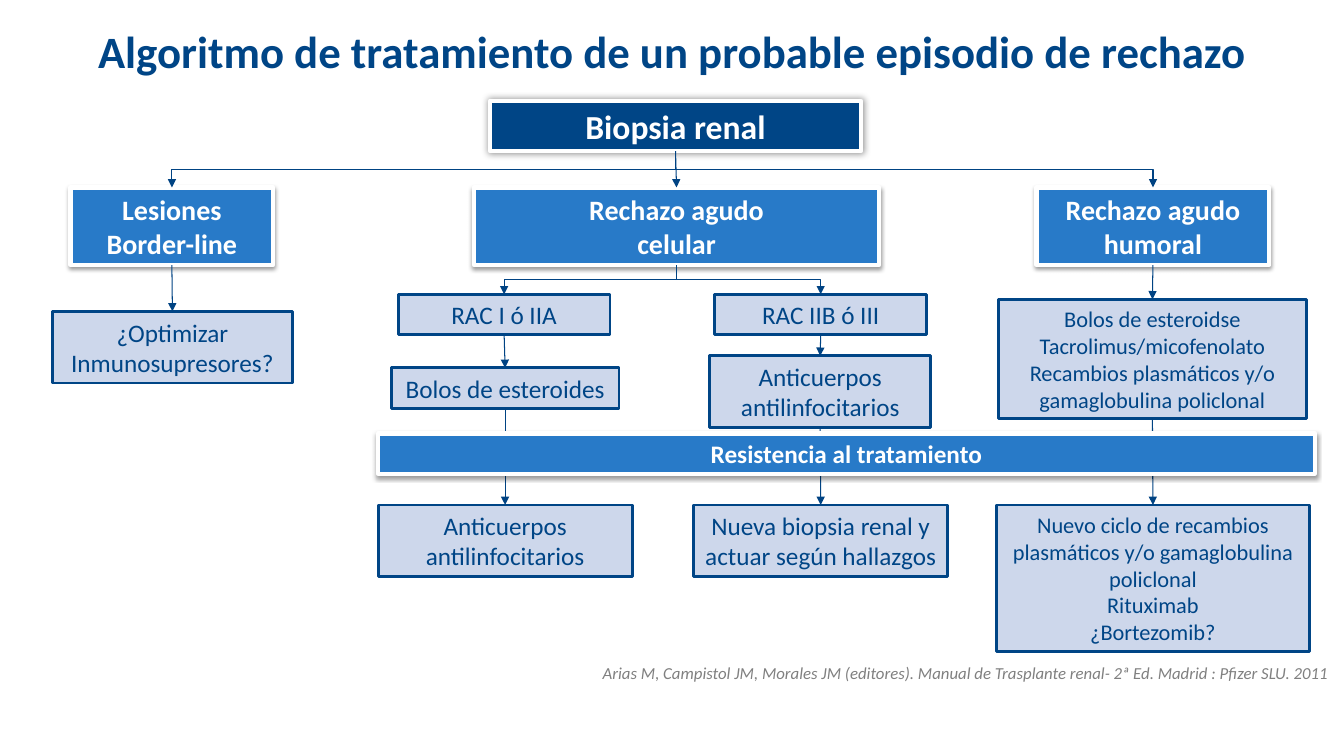
from lxml import etree
from pptx import Presentation
from pptx.dml.color import RGBColor
from pptx.enum.shapes import MSO_CONNECTOR as Link, MSO_SHAPE as Shape
from pptx.enum.text import MSO_ANCHOR as Anchor, MSO_AUTO_SIZE as Fit, PP_ALIGN as Align
from pptx.oxml.ns import qn
from pptx.util import Inches, Pt

NAVY, BLUE, PALE, WHITE, GREY = "004586", "287AC8", "CDD7EB", "FFFFFF", "808080"
WIRE = "004383"
TOP, BOTTOM = 0, 2


def rgb(code):
    return RGBColor.from_string(code)


class Chart:
    """Draws the boxes and arrows of the flow on one slide."""
    font = "Calibri"

    def __init__(self, slide):
        self.slide = slide
        self.shapes = slide.shapes

    def label(self, shape, text, size, color, bold=False, italic=False, align=Align.CENTER):
        frame = shape.text_frame
        frame.word_wrap = True
        frame.vertical_anchor = Anchor.MIDDLE
        frame.text = text
        para = frame.paragraphs[0]
        para.alignment = align
        font = para.font
        font.name, font.size = self.font, Pt(size)
        font.bold, font.italic = bold, italic
        font.color.rgb = rgb(color)

    def title(self, text, *area):
        shape = self.shapes.title
        shape.left, shape.top, shape.width, shape.height = map(Inches, area)
        self.label(shape, text, 32, NAVY, bold=True)

    def note(self, text, *area):
        shape = self.shapes.add_textbox(*map(Inches, area))
        self.label(shape, text, 12, GREY, italic=True, align=Align.RIGHT)

    def box(self, text, area, size, fill, edge, width, color, bold=False):
        shape = self.shapes.add_shape(Shape.RECTANGLE, *map(Inches, area))
        shape.shadow.inherit = False
        shape.fill.solid()
        shape.fill.fore_color.rgb = rgb(fill)
        shape.line.color.rgb = rgb(edge)
        shape.line.width = Pt(width)
        self.label(shape, text, size, color, bold)
        shape.text_frame.auto_size = Fit.SHAPE_TO_FIT_TEXT
        return shape

    def head(self, text, area, size=20, fill=BLUE, blur=3.1, dist=1.6, alpha=38):
        """Add a filled box with a white edge and a soft shadow."""
        shape = self.box(text, area, size, fill, WHITE, 3, WHITE, True)
        effects = shape.element.spPr.find(qn("a:effectLst"))
        shade = etree.SubElement(effects, qn("a:outerShdw"), blurRad=str(Pt(blur)),
                                 dist=str(Pt(dist)), dir="5400000", rotWithShape="0")
        tone = etree.SubElement(shade, qn("a:srgbClr"), val="000000")
        etree.SubElement(tone, qn("a:alpha"), val=str(alpha * 1000))
        return shape

    def step(self, text, area, size=18):
        return self.box(text, area, size, PALE, NAVY, 2, NAVY)

    def arrow(self, start, end, kind=Link.STRAIGHT):
        """Join the bottom of one box to the top of another."""
        wire = self.shapes.add_connector(kind, 0, 0, 0, 0)
        wire.begin_connect(start, BOTTOM)
        wire.end_connect(end, TOP)
        wire.line.color.rgb = rgb(WIRE)
        wire.line.width = Pt(0.75)
        props = wire.element.spPr
        etree.SubElement(props.find(qn("a:ln")), qn("a:tailEnd"), type="triangle")
        etree.SubElement(props, qn("a:effectLst"))
        return wire

    def bend(self, start, end):
        """Add an arrow that runs down, across and down again."""
        wire = self.arrow(start, end, Link.ELBOW)
        right = wire.end_x > wire.begin_x
        wide, high = wire.width, wire.height
        mid_x, mid_y = wire.left + wide // 2, wire.top + high // 2
        wire.left, wire.top = mid_x - high // 2, mid_y - wide // 2
        wire.width, wire.height = high, wide
        frame = wire.element.spPr.find(qn("a:xfrm"))
        frame.set("rot", "16200000" if right else "5400000")
        frame.set("flipH", "1" if right else "0")


def main():
    deck = Presentation()
    deck.slide_width, deck.slide_height = Inches(13.33), Inches(7.5)
    flow = Chart(deck.slides.add_slide(deck.slide_layouts[5]))
    flow.title("Algoritmo de tratamiento de un probable episodio de rechazo",
               0.67, 0.17, 12, 0.66)

    root = flow.head("Biopsia renal", (4.86, 1, 3.68, 0.5), 24, NAVY, 5, 0, 40)
    border, cell, humor = [
        flow.head(text, (left, 1.86, width, 0.77)) for text, left, width in (
            ("Lesiones\vBorder-line", 0.7, 2.01),
            ("Rechazo agudo\vcelular", 4.7, 4.02),
            ("Rechazo agudo\vhumoral", 10.28, 2.31))]

    mild, severe = [flow.step(text, (left, 2.92, 2.1, 0.4)) for text, left in (
        ("RAC I ó IIA", 3.95), ("RAC IIB ó III", 7.09))]
    tune = flow.step("¿Optimizar Inmunosupresores?", (0.52, 3.09, 2.38, 0.71))
    bolus = flow.step("Bolos de esteroides", (3.88, 3.65, 2.26, 0.4))
    anti = flow.step("Anticuerpos antilinfocitarios", (7.04, 3.53, 2.19, 0.71))
    plasma = flow.step("Bolos de esteroidse\vTacrolimus/micofenolato\v"
                       "Recambios plasmáticos y/o gamaglobulina policlonal",
                       (9.9, 2.97, 3.06, 1.18), 16)

    rescue, again = [flow.step(text, (left, 5.01, 2.52, 0.71)) for text, left in (
        ("Anticuerpos antilinfocitarios", 3.75),
        ("Nueva biopsia renal y actuar según hallazgos", 6.88))]
    cycle = flow.step("Nuevo ciclo de recambios plasmáticos y/o gamaglobulina policlonal"
                      "\vRituximab\v¿Bortezomib?", (9.88, 5.01, 3.11, 1.45), 16)

    for start, end in ((root, border), (root, humor), (cell, mild), (cell, severe)):
        flow.bend(start, end)
    for start, end in ((root, cell), (border, tune), (humor, plasma), (mild, bolus),
                       (severe, anti), (bolus, rescue), (anti, again), (plasma, cycle)):
        flow.arrow(start, end)

    flow.head("Resistencia al tratamiento", (3.75, 4.3, 9.29, 0.4), 18)
    flow.note("Arias M, Campistol JM, Morales JM (editores). Manual de Trasplante renal- "
              "2ª Ed. Madrid : Pfizer SLU. 2011", 5.83, 6.52, 7.45, 0.3)
    deck.save("out.pptx")


if __name__ == "__main__":
    main()
